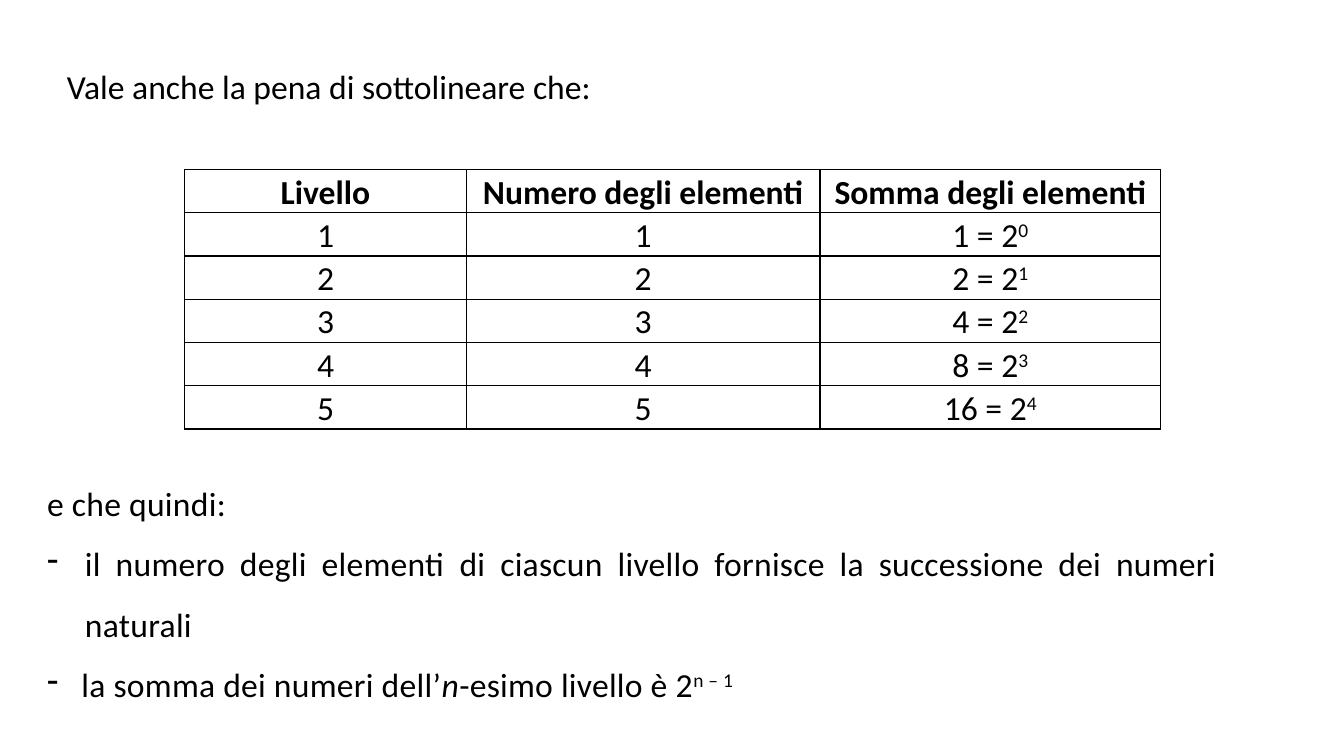
from lxml import etree
from pptx import Presentation
from pptx.dml import color
from pptx.enum import text
from pptx.oxml import ns
from pptx.util import Pt

BLACK = color.RGBColor(0, 0, 0)
FONT_NAME = "Calibri"
FONT_SIZE = Pt(24)
HEADERS = ["Livello", "Numero degli elementi", "Somma degli elementi"]
COLUMN_WIDTHS = [201, 252.7, 243.4]
ROW_HEIGHT = 30.9
LEVELS = 5


def style_paragraph(paragraph, line_spacing, alignment, bold=False):
    paragraph.line_spacing = line_spacing
    paragraph.alignment = alignment
    font = paragraph.font
    font.name = FONT_NAME
    font.size = FONT_SIZE
    font.color.rgb = BLACK
    font.bold = bold


def add_run(paragraph, words, italic=None, superscript=False, spacing=None):
    run = paragraph.add_run()
    run.text = words
    run.font.italic = italic
    properties = run._r.get_or_add_rPr()
    if superscript:
        properties.set("baseline", "30000")
    if spacing:
        properties.set("spc", str(spacing))


def set_indent(paragraph, left, first_line, bullet=None):
    properties = paragraph._p.get_or_add_pPr()
    properties.set("marL", str(Pt(left)))
    properties.set("indent", str(Pt(first_line)))
    if bullet:
        mark = etree.Element(ns.qn("a:buChar"), char=bullet)
        defaults = properties.find(ns.qn("a:defRPr"))
        defaults.addprevious(mark)


def add_text_frame(slide, left, top, width, height, wrap=True):
    box = slide.shapes.add_textbox(Pt(left), Pt(top), Pt(width), Pt(height))
    box.text_frame.word_wrap = wrap
    return box.text_frame


def add_borders(cell):
    properties = cell._tc.get_or_add_tcPr()
    for side in ("lnL", "lnR", "lnT", "lnB"):
        line = etree.SubElement(properties, ns.qn(f"a:{side}"), w=str(Pt(1)))
        fill = etree.SubElement(line, ns.qn("a:solidFill"))
        etree.SubElement(fill, ns.qn("a:srgbClr"), val=str(BLACK))


def fill_cell(cell, words, exponent=None, bold=False):
    cell.margin_left = cell.margin_right = Pt(5)
    cell.margin_top = cell.margin_bottom = 0
    add_borders(cell)
    cell.fill.background()
    paragraph = cell.text_frame.paragraphs[0]
    style_paragraph(paragraph, 1.07, text.PP_ALIGN.CENTER, bold)
    add_run(paragraph, words)
    if exponent is not None:
        add_run(paragraph, str(exponent), superscript=True)


def add_level_table(slide):
    frame = slide.shapes.add_table(
        LEVELS + 1, len(HEADERS), Pt(132), Pt(121),
        Pt(sum(COLUMN_WIDTHS)), Pt(ROW_HEIGHT * (LEVELS + 1)))
    table = frame.table
    table.first_row = table.horz_banding = False
    for column, width in zip(table.columns, COLUMN_WIDTHS):
        column.width = Pt(width)
    for row in table.rows:
        row.height = Pt(ROW_HEIGHT)
    for index, header in enumerate(HEADERS):
        fill_cell(table.cell(0, index), header, bold=True)
    for level in range(1, LEVELS + 1):
        fill_cell(table.cell(level, 0), str(level))
        fill_cell(table.cell(level, 1), str(level))
        exponent = level - 1
        fill_cell(table.cell(level, 2), f"{2 ** exponent} = 2", exponent)


def add_introduction(slide):
    frame = add_text_frame(slide, 26.6, 43.2, 407.5, 58.3, wrap=False)
    paragraph = frame.paragraphs[0]
    style_paragraph(paragraph, 1, text.PP_ALIGN.LEFT)
    set_indent(paragraph, 0, 14.2)
    add_run(paragraph, "Vale anche la pena di sottolineare che:")


def add_conclusions(slide):
    frame = add_text_frame(slide, 26.6, 326.9, 850.3, 181.4)
    opening = frame.paragraphs[0]
    naturals = frame.add_paragraph()
    powers = frame.add_paragraph()
    for paragraph in (opening, naturals):
        style_paragraph(paragraph, 1.5, text.PP_ALIGN.JUSTIFY)
    style_paragraph(powers, 1.5, text.PP_ALIGN.LEFT)
    set_indent(naturals, 27, -27, "-")
    set_indent(powers, 24.5, -24.5, "-")

    add_run(opening, "e che quindi:", spacing=20)
    add_run(naturals, "il numero degli elementi di ciascun livello fornisce "
            "la successione dei numeri naturali", spacing=20)
    add_run(powers, "la somma dei numeri dell’", spacing=20)
    add_run(powers, "n", italic=True, spacing=20)
    add_run(powers, "-esimo livello è 2", spacing=20)
    add_run(powers, "n – 1", superscript=True, spacing=20)


def main():
    presentation = Presentation()
    presentation.slide_width = Pt(960)
    presentation.slide_height = Pt(540)
    slide = presentation.slides.add_slide(presentation.slide_layouts[6])
    add_introduction(slide)
    add_level_table(slide)
    add_conclusions(slide)
    presentation.save("out.pptx")


if __name__ == "__main__":
    main()
